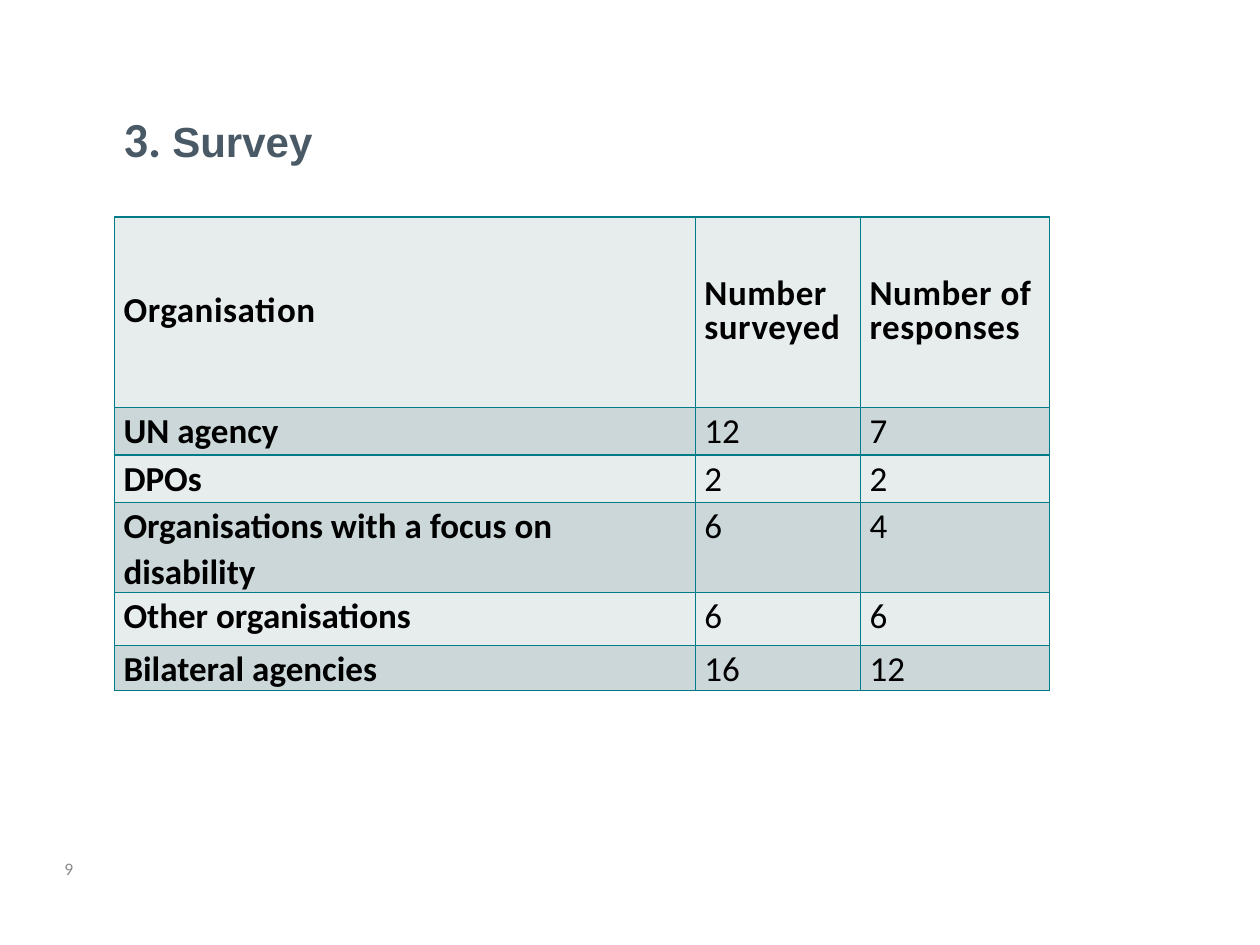
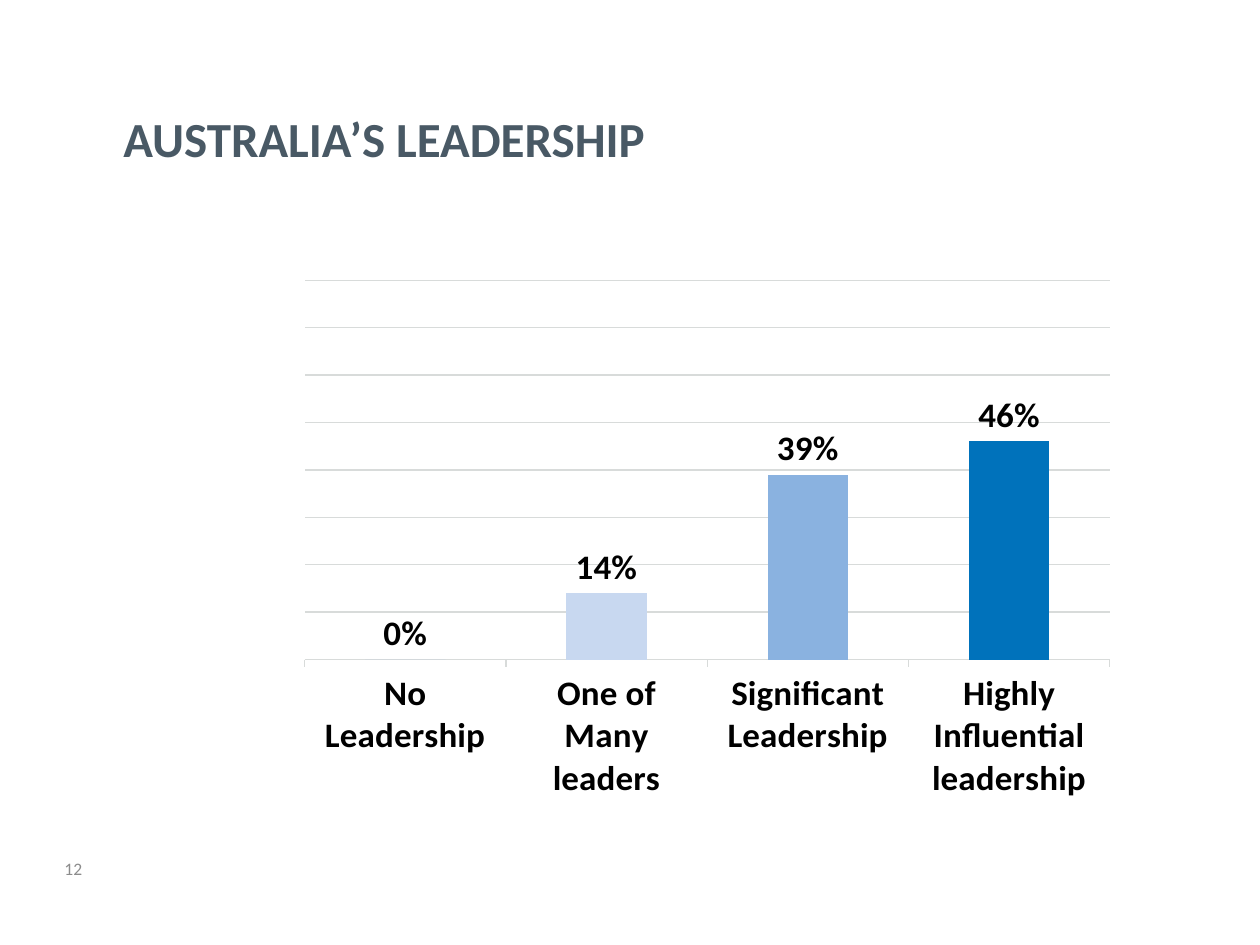
import pptx
import pptx.chart.data
import pptx.dml.color
import pptx.enum.chart
import pptx.enum.text
import pptx.oxml
import pptx.oxml.ns
import pptx.util

Cm = pptx.util.Cm
Pt = pptx.util.Pt
qn = pptx.oxml.ns.qn
Anchor = pptx.enum.text.MSO_ANCHOR
SLATE, TEAL, BLACK = "495965", "007C89", "000000"
LIGHT, DARK, GREY, GRID = "E7ECED", "CCD7DA", "8C8C8C", "D8DBDA"
HEAD = {"size": Pt(28), "name": "Calibri", "bold": True}
SUB = {"size": Pt(24), "name": "Arial", "bold": True}
BODY = {"size": Pt(20), "name": "Calibri"}
NOTE = {"size": Pt(10), "name": "Calibri"}
ROWS = [
    ("Organisation", "Number surveyed", "Number of responses"),
    ("UN agency", "12", "7"),
    ("DPOs", "2", "2"),
    ("Organisations with a focus on disability", "6", "4"),
    ("Other organisations", "6", "6"),
    ("Bilateral agencies", "16", "12"),
]
WIDTHS = [11.71, 3.33, 3.81]
HEIGHTS = [3.84, 0.96, 0.96, 1.27, 1.07, 0.86]
SHARES = {
    "No Leadership": 0,
    "One of Many leaders": 0.14,
    "Significant Leadership": 0.39,
    "Highly Influential leadership": 0.46,
}
FILLS = ["B4C7E7", "C8D8F0", "8AB2E0", "0072BB"]
PLOT = {"x": 0.18, "y": 0.05, "w": 0.8, "h": 0.71}


def rgb(code):
    """Turn a hex string into a colour."""
    return pptx.dml.color.RGBColor.from_string(code)


def put(item, values):
    """Set each named attribute of an item."""
    for name, value in values.items():
        setattr(item, name, value)


def style(font, look, code):
    """Give a font its look and colour."""
    put(font, look)
    font.color.rgb = rgb(code)


def paint(fill, code):
    """Fill with one solid colour."""
    fill.solid()
    fill.fore_color.rgb = rgb(code)


def rule(line):
    """Draw a chart line in the grid colour."""
    line.color.rgb = rgb(GRID)
    line.width = Pt(0.75)


def add_text(slide, place, runs, code, anchor=Anchor.TOP, lead=None):
    """Add a text box made of styled runs."""
    frame = slide.shapes.add_textbox(*map(Cm, place)).text_frame
    put(frame, {"word_wrap": True, "vertical_anchor": anchor,
                "margin_left": 0, "margin_right": 0,
                "margin_top": 0, "margin_bottom": 0})
    para = frame.paragraphs[0]
    para.line_spacing = lead
    for text, look in runs:
        run = para.add_run()
        run.text = text
        style(run.font, look, code)


def add_page(deck, title, number):
    """Add a blank slide with its title and number."""
    slide = deck.slides.add_slide(deck.slide_layouts[6])
    add_text(slide, (2.49, 1.6, 20.29, 1.78), title, SLATE,
             Anchor.BOTTOM, Pt(28))
    add_text(slide, (1.3, 17.3, 12.5, 0.51), [(number, NOTE)], GREY)
    return slide


def add_edges(cell):
    """Draw the four borders of a cell."""
    props = cell._tc.get_or_add_tcPr()
    for side in "LRTB":
        props.append(pptx.oxml.parse_xml(
            f'<a:ln{side} {pptx.oxml.ns.nsdecls("a")} w="12700"><a:solidFill>'
            f'<a:srgbClr val="{TEAL}"/></a:solidFill></a:ln{side}>'))


def fill_cell(cell, text, row, col):
    """Write and style one table cell."""
    top = row == 0
    put(cell, {"margin_left": Cm(0.18), "margin_right": Cm(0.18),
               "margin_top": 0, "margin_bottom": 0,
               "vertical_anchor": Anchor.MIDDLE if top else Anchor.TOP})
    add_edges(cell)
    paint(cell.fill, DARK if row % 2 else LIGHT)
    para = cell.text_frame.paragraphs[0]
    put(para, {"line_spacing": 0.8 if top else 1.07,
               "space_before": Pt(0), "space_after": Pt(0 if top else 3)})
    run = para.add_run()
    run.text = text
    style(run.font, {**BODY, "bold": top or col == 0}, BLACK)
    if top:
        run._r.get_or_add_rPr().set("spc", "30")


def add_grid(slide):
    """Add the survey table."""
    table = slide.shapes.add_table(
        len(ROWS), len(WIDTHS), Cm(2.31), Cm(4.37),
        Cm(sum(WIDTHS)), Cm(sum(HEIGHTS))).table
    put(table, {"first_row": False, "horz_banding": False})
    for column, width in zip(table.columns, WIDTHS):
        column.width = Cm(width)
    for row, (height, texts) in enumerate(zip(HEIGHTS, ROWS)):
        table.rows[row].height = Cm(height)
        for col, text in enumerate(texts):
            fill_cell(table.cell(row, col), text, row, col)


def set_plot(chart):
    """Fix the inner plot area inside the chart."""
    area = chart._chartSpace.find(".//" + qn("c:plotArea"))
    for old in area.findall(qn("c:layout")):
        area.remove(old)
    modes = '<c:xMode val="edge"/><c:yMode val="edge"/>'
    sizes = "".join(f'<c:{key} val="{val}"/>' for key, val in PLOT.items())
    area.insert(0, pptx.oxml.parse_xml(
        f'<c:layout {pptx.oxml.ns.nsdecls("c")}><c:manualLayout>'
        f'<c:layoutTarget val="inner"/>{modes}{sizes}'
        '</c:manualLayout></c:layout>'))


def add_bars(slide):
    """Add the column chart of leadership ratings."""
    kinds = pptx.enum.chart
    data = pptx.chart.data.CategoryChartData(number_format="0%")
    data.categories = list(SHARES)
    data.add_series("Series 1", list(SHARES.values()))
    chart = slide.shapes.add_chart(
        kinds.XL_CHART_TYPE.COLUMN_CLUSTERED,
        Cm(2.49), Cm(5.11), Cm(20.29), Cm(11), data).chart
    put(chart, {"has_legend": False, "has_title": False})
    style(chart.font, NOTE, BLACK)
    set_plot(chart)
    plot = chart.plots[0]
    put(plot, {"gap_width": 150, "vary_by_categories": False,
               "has_data_labels": True})
    bold = {**BODY, "bold": True}
    put(plot.data_labels, {
        "show_value": True, "number_format": "0%",
        "number_format_is_linked": False,
        "position": kinds.XL_LABEL_POSITION.OUTSIDE_END})
    style(plot.data_labels.font, bold, BLACK)
    bars = plot.series[0]
    paint(bars.format.fill, FILLS[0])
    for spot, code in enumerate(FILLS[1:], 1):
        paint(bars.points[spot].format.fill, code)
    base = chart.category_axis
    base.major_tick_mark = kinds.XL_TICK_MARK.OUTSIDE
    style(base.tick_labels.font, bold, BLACK)
    rule(base.format.line)
    scale = chart.value_axis
    put(scale, {"visible": False, "minimum_scale": 0, "maximum_scale": 0.8,
                "major_unit": 0.1, "has_major_gridlines": True})
    rule(scale.major_gridlines.format.line)


def main():
    """Build both slides and save the deck."""
    deck = pptx.Presentation()
    put(deck, {"slide_width": Cm(25.4), "slide_height": Cm(19.05)})
    add_grid(add_page(deck, [("3. ", HEAD), ("Survey", SUB)], "9"))
    add_bars(add_page(deck, [("AUSTRALIA’S LEADERSHIP", HEAD)], "12"))
    deck.save("out.pptx")


if __name__ == "__main__":
    main()
